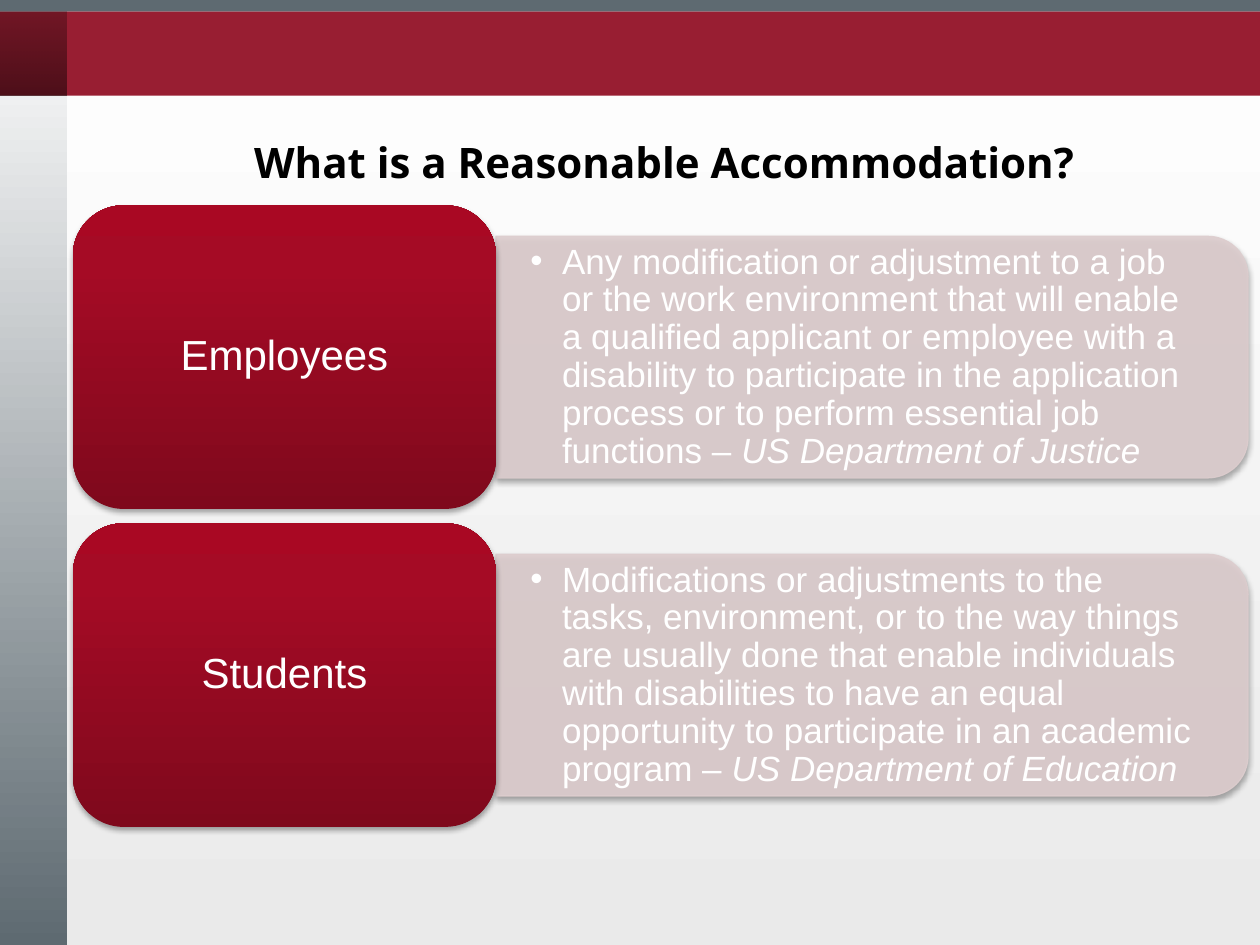
from dataclasses import dataclass

from lxml.etree import SubElement
from pptx import Presentation
from pptx.dml.color import RGBColor
from pptx.enum.shapes import MSO_SHAPE as Preset
from pptx.enum.text import MSO_ANCHOR as Anchor, MSO_AUTO_SIZE as AutoSize, PP_ALIGN as Align
from pptx.oxml.ns import qn
from pptx.util import Cm, Pt


@dataclass(frozen=True)
class Theme:
    slate: str = "5E6A71"
    crimson: str = "981E32"
    panel: str = "DDCDCE"
    white: str = "FFFFFF"
    black: str = "000000"
    # Gradient stops: position %, colour, opacity %; first stop at the bottom
    page: tuple = ((0, "EAEAEA", 100), (100, "FFFFFF", 100))
    sidebar: tuple = ((0, "5E6A71", 100), (100, "FFFFFF", 100))
    shade: tuple = ((0, "000000", 50), (100, "000000", 25))
    card: tuple = ((0, "7F091C", 100), (80, "A50B25", 100), (100, "A90823", 100))
    heading_font: str = "Noto Sans"
    body_font: str = "Arial"
    heading_size: int = 24
    body_size: int = 20


THEME = Theme()
WIDTH, HEIGHT = 25.4, 19.05
STRIP_HEIGHT, BAND_HEIGHT, SIDEBAR_WIDTH = 0.23, 1.7, 1.35
CARD_LEFT, CARD_WIDTH, CARD_HEIGHT = 1.47, 8.53, 6.12
PANEL_LEFT, PANEL_WIDTH, PANEL_HEIGHT = CARD_LEFT + CARD_WIDTH, 15.16, 4.87
LIST_WIDTH, LIST_HEIGHT = 14.94, 4.42
FIRST_CENTRE, ROW_PITCH = 7.2, 6.41

ROWS = [
    ("Employees",
     "Any modification or adjustment to a job or the work environment that will enable "
     "a qualified applicant or employee with a disability to participate in the "
     "application process or to perform essential job functions – ",
     "US Department of Justice"),
    ("Students",
     "Modifications or adjustments to the tasks, environment, or to the way things are "
     "usually done that enable individuals with disabilities to have an equal "
     "opportunity to participate in an academic program – ",
     "US Department of Education"),
]


def add_opacity(colour, percent):
    SubElement(colour, qn("a:alpha"), val=str(percent * 1000))


def paint_gradient(fill, owner, stops):
    fill.gradient()
    fill.gradient_angle = 90
    stop_list = owner.element.find(".//" + qn("a:gsLst"))
    for old_stop in list(stop_list):
        stop_list.remove(old_stop)
    for position, value, opacity in stops:
        stop = SubElement(stop_list, qn("a:gs"), pos=str(position * 1000))
        colour = SubElement(stop, qn("a:srgbClr"), val=value)
        if opacity < 100:
            add_opacity(colour, opacity)


def add_shadow(box):
    effects = box.element.spPr.find(qn("a:effectLst"))
    shadow = SubElement(effects, qn("a:outerShdw"), blurRad=str(Pt(3.1)),
                        dist=str(Pt(1.8)), dir="5400000", rotWithShape="0")
    add_opacity(SubElement(shadow, qn("a:srgbClr"), val=THEME.black), 35)


def add_block(page, preset, left, top, width, height, paint):
    """Add a shape filled with one colour, or with a gradient given as stops."""
    box = page.shapes.add_shape(preset, Cm(left), Cm(top), Cm(width), Cm(height))
    box.shadow.inherit = False
    box.line.fill.background()
    if isinstance(paint, str):
        box.fill.solid()
        box.fill.fore_color.rgb = RGBColor.from_string(paint)
    else:
        paint_gradient(box.fill, box, paint)
    return box


def style_para(para, name, size, colour, align):
    para.alignment = align
    para.line_spacing = 0.9
    para.space_before = Pt(0)
    para.font.name = name
    para.font.size = Pt(size)
    para.font.color.rgb = RGBColor.from_string(colour)


def set_frame(frame, anchor, side, edge):
    frame.word_wrap = True
    frame.auto_size = AutoSize.NONE
    frame.vertical_anchor = anchor
    frame.margin_left = frame.margin_right = Cm(side)
    frame.margin_top = frame.margin_bottom = Cm(edge)


def place(box, left, top, width, height):
    box.left, box.top, box.width, box.height = Cm(left), Cm(top), Cm(width), Cm(height)


def add_frame_bands(page):
    add_block(page, Preset.RECTANGLE, 0, 0, SIDEBAR_WIDTH, HEIGHT, THEME.sidebar)
    add_block(page, Preset.RECTANGLE, 0, STRIP_HEIGHT, WIDTH, BAND_HEIGHT, THEME.crimson)
    add_block(page, Preset.RECTANGLE, 0, STRIP_HEIGHT, SIDEBAR_WIDTH, BAND_HEIGHT, THEME.shade)
    add_block(page, Preset.RECTANGLE, 0, 0, WIDTH, STRIP_HEIGHT, THEME.slate)


def fill_title(box, text):
    place(box, 1.37, 2.74, 24.03, 1.17)
    set_frame(box.text_frame, Anchor.BOTTOM, 1.27, 0.13)
    box.text_frame.text = text
    para = box.text_frame.paragraphs[0]
    style_para(para, THEME.heading_font, THEME.heading_size, THEME.black, Align.CENTER)
    para.font.bold = True


def add_panel(page, centre):
    # Drawn upright, then turned so that the rounded end faces right
    box = add_block(page, Preset.ROUND_2_SAME_RECTANGLE,
                    PANEL_LEFT + (PANEL_WIDTH - PANEL_HEIGHT) / 2,
                    centre - PANEL_WIDTH / 2, PANEL_HEIGHT, PANEL_WIDTH, THEME.panel)
    box.rotation = 90
    box.line.color.rgb = RGBColor.from_string(THEME.panel)
    box.line.width = Pt(0.75)
    for colour in box.element.spPr.iter(qn("a:srgbClr")):
        add_opacity(colour, 90)
    add_shadow(box)


def fill_list(page, box, centre, text, source):
    place(box, PANEL_LEFT, centre - LIST_HEIGHT / 2, LIST_WIDTH, LIST_HEIGHT)
    set_frame(box.text_frame, Anchor.MIDDLE, 0.69, 0.36)
    para = box.text_frame.paragraphs[0]
    style_para(para, THEME.body_font, THEME.body_size, THEME.white, Align.LEFT)
    para.add_run().text = text
    span = para.add_run()
    span.text = source
    span.font.italic = True
    props = para._p.get_or_add_pPr()
    props.set("marL", str(Cm(0.64)))
    props.set("indent", str(Cm(-0.64)))
    SubElement(props, qn("a:buChar"), char="•")
    # Bring the list in front of its panel
    page.shapes._spTree.append(box.element)


def add_card(page, centre, label):
    box = add_block(page, Preset.ROUNDED_RECTANGLE, CARD_LEFT, centre - CARD_HEIGHT / 2,
                    CARD_WIDTH, CARD_HEIGHT, THEME.card)
    add_shadow(box)
    set_frame(box.text_frame, Anchor.MIDDLE, 0.25, 0.13)
    box.text_frame.text = label
    style_para(box.text_frame.paragraphs[0], THEME.body_font, THEME.heading_size,
               THEME.white, Align.CENTER)


def main():
    deck = Presentation()
    deck.slide_width, deck.slide_height = Cm(WIDTH), Cm(HEIGHT)
    page = deck.slides.add_slide(deck.slide_layouts.get_by_name("Two Content"))
    title, *lists = page.placeholders

    # Background, bands and title
    paint_gradient(page.background.fill, page, THEME.page)
    add_frame_bands(page)
    fill_title(title, "What is a Reasonable Accommodation?")

    # One row per audience: panel, list, card
    for index, (box, (label, text, source)) in enumerate(zip(lists, ROWS)):
        centre = FIRST_CENTRE + index * ROW_PITCH
        add_panel(page, centre)
        fill_list(page, box, centre, text, source)
        add_card(page, centre, label)

    deck.save("out.pptx")


if __name__ == "__main__":
    main()
